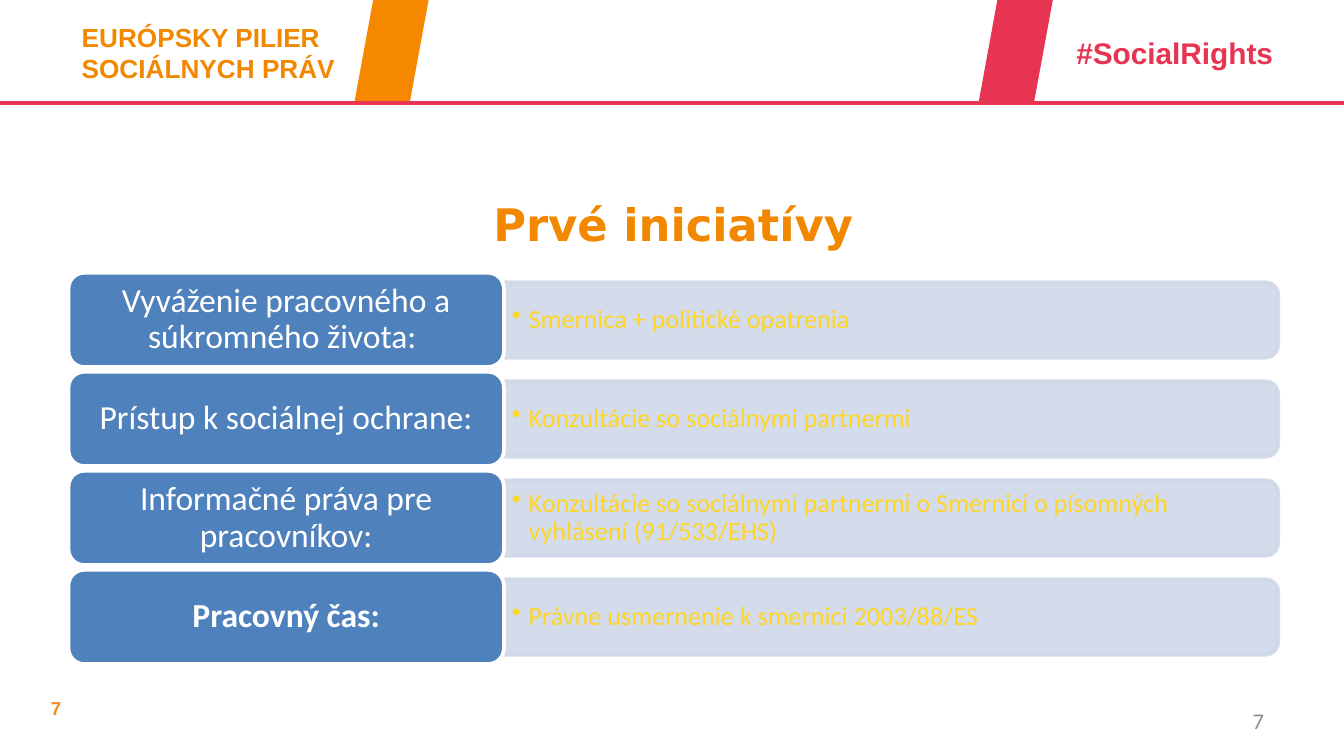
from lxml.etree import SubElement
from pptx import Presentation
from pptx.dml.color import RGBColor
from pptx.enum.shapes import MSO_CONNECTOR, MSO_SHAPE
from pptx.enum.text import MSO_ANCHOR, PP_ALIGN
from pptx.oxml.ns import qn
from pptx.util import Pt

THEME = {
    "orange": RGBColor.from_string("F18800"),
    "page_orange": RGBColor.from_string("F68B20"),
    "band_orange": RGBColor.from_string("F68800"),
    "red": RGBColor.from_string("E73452"),
    "grey": RGBColor.from_string("8C8C8C"),
    "blue": RGBColor.from_string("4F81BD"),
    "pale": RGBColor.from_string("D0D8E8"),
    "yellow": RGBColor.from_string("FFD624"),
    "white": RGBColor.from_string("FFFFFF"),
    "title": 24, "label": 18, "tag": 16, "body": 14, "number": 12, "small": 10,
}


def write(shape, text, font, size, color, bold=False, align=PP_ALIGN.LEFT,
          anchor=MSO_ANCHOR.TOP, inset=(7.2, 3.6), bullet=False):
    frame = shape.text_frame
    frame.word_wrap = True
    frame.vertical_anchor = anchor
    frame.margin_left = frame.margin_right = Pt(inset[0])
    frame.margin_top = frame.margin_bottom = Pt(inset[1])
    para = frame.paragraphs[0]
    para.text = text
    para.alignment = align
    if bullet:
        para.level = 1
        properties = para._p.get_or_add_pPr()
        properties.set("marL", str(Pt(9)))
        properties.set("indent", str(Pt(-9)))
        SubElement(properties, qn("a:buChar")).set("char", "•")
    for span in para.runs:
        span.font.name = font
        span.font.size = Pt(THEME[size])
        span.font.bold = bold
        span.font.color.rgb = THEME[color]
    return para


def paint(shape, fill, line=None, opacity=100):
    shape.shadow.inherit = False
    shape.fill.solid()
    shape.fill.fore_color.rgb = THEME[fill]
    if line:
        shape.line.color.rgb = THEME[line]
        shape.line.width = Pt(2)
    else:
        shape.line.fill.background()
    if opacity < 100:
        for color in shape._element.spPr.iter(qn("a:srgbClr")):
            SubElement(color, qn("a:alpha")).set("val", str(opacity * 1000))


deck = Presentation()
deck.slide_width, deck.slide_height = Pt(720), Pt(405)
page = deck.slides.add_slide(deck.slide_layouts[6])
shapes = page.shapes

rule = shapes.add_connector(MSO_CONNECTOR.STRAIGHT, Pt(0), Pt(55.2), Pt(720), Pt(55.2))
rule.line.color.rgb = THEME["red"]
rule.line.width = Pt(2.25)
SubElement(rule._element.spPr, qn("a:effectLst"))

for left, color in ((190, "band_orange"), (524.4, "red")):
    band = shapes.add_shape(MSO_SHAPE.PARALLELOGRAM, Pt(left), Pt(0), Pt(39.6), Pt(54))
    paint(band, color)

pillar = shapes.add_textbox(Pt(36.7), Pt(7.9), Pt(183), Pt(41))
write(pillar, "EURÓPSKY PILIER \vSOCIÁLNYCH PRÁV", "Arial", "body", "orange", True)

hashtag = shapes.add_textbox(Pt(569.5), Pt(15.1), Pt(136), Pt(26.6))
write(hashtag, "#SocialRights", "Arial", "tag", "red", True)

title = shapes.add_textbox(Pt(36.7), Pt(92.2), Pt(648), Pt(55.4))
write(title, "Prvé iniciatívy", "DejaVu Sans", "title", "orange", True,
      PP_ALIGN.CENTER, MSO_ANCHOR.MIDDLE)

left_number = shapes.add_textbox(Pt(20.2), Pt(370), Pt(157), Pt(19.4))
write(left_number, "7", "Arial", "small", "page_orange", True)

right_number = shapes.add_textbox(Pt(516.2), Pt(375.4), Pt(168), Pt(21.6))
write(right_number, "7", "Calibri", "number", "grey",
      align=PP_ALIGN.RIGHT, anchor=MSO_ANCHOR.MIDDLE)

initiatives = [
    ("Vyváženie pracovného a súkromného života: ", "Smernica + politické opatrenia", False),
    ("Prístup k sociálnej ochrane:", "Konzultácie so sociálnymi partnermi", False),
    ("Informačné práva pre pracovníkov:",
     "Konzultácie so sociálnymi partnermi o Smernici o písomných vyhlásení (91/533/EHS)", False),
    ("Pracovný čas:", "Právne usmernenie k smernici 2003/88/ES", True),
]
label_left, label_width, label_height = 36.7, 233.3, 50.5
bar_left, bar_length, bar_height = 270, 414.7, 40.4
first_middle, pitch = 171.4, 53.05

for row, (topic, measure, bold) in enumerate(initiatives):
    middle = first_middle + row * pitch

    bar = shapes.add_shape(
        MSO_SHAPE.ROUND_2_SAME_RECTANGLE,
        Pt(bar_left + (bar_length - bar_height) / 2), Pt(middle - bar_length / 2),
        Pt(bar_height), Pt(bar_length))
    bar.rotation = 90
    paint(bar, "pale", "pale", 90)

    note = shapes.add_textbox(Pt(bar_left), Pt(middle - 18.3), Pt(412.7), Pt(36.6))
    para = write(note, measure, "Calibri", "body", "yellow",
                 anchor=MSO_ANCHOR.MIDDLE, inset=(4.2, 2.1), bullet=True)
    para.line_spacing = 0.9

    label = shapes.add_shape(
        MSO_SHAPE.ROUNDED_RECTANGLE, Pt(label_left), Pt(middle - label_height / 2),
        Pt(label_width), Pt(label_height))
    paint(label, "blue", "white")
    para = write(label, topic, "Calibri", "label", "white", bold,
                 PP_ALIGN.CENTER, MSO_ANCHOR.MIDDLE, (5.2, 2.7))
    para.line_spacing = 0.9

deck.save("out.pptx")
